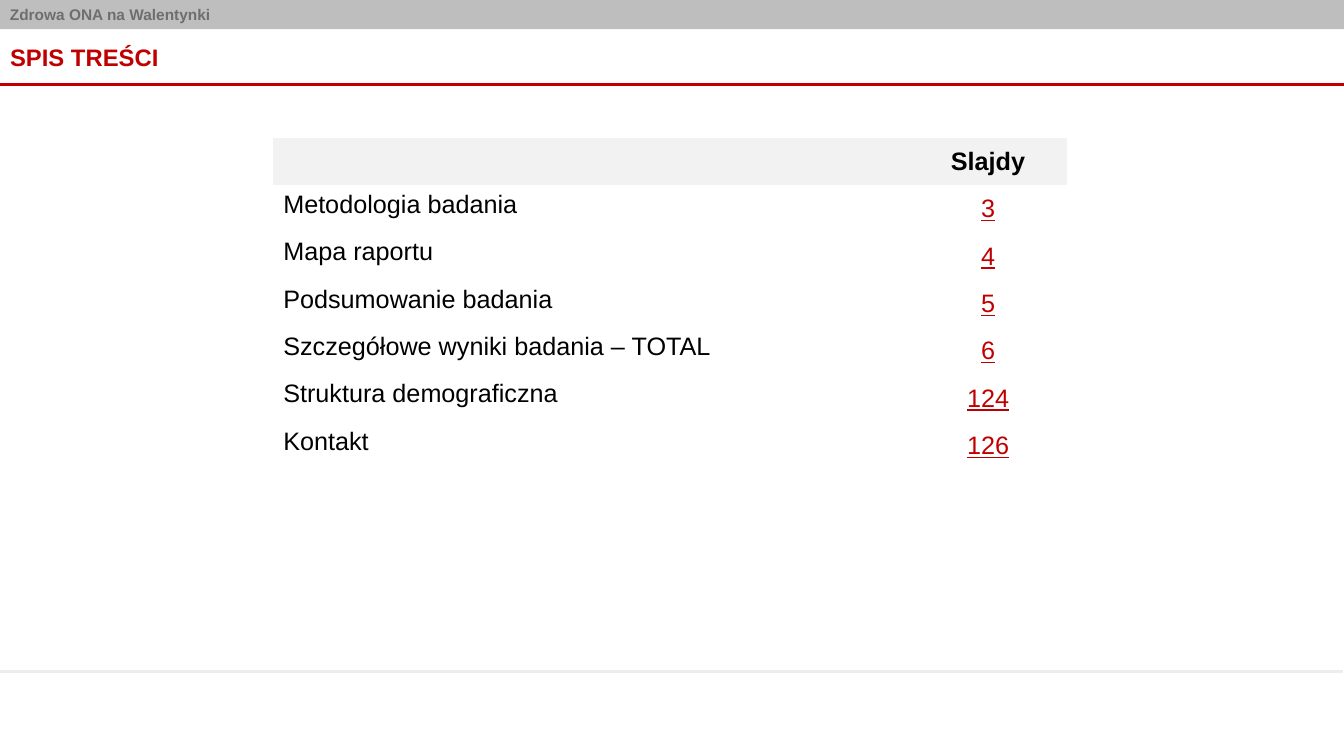
"""Build the table-of-contents slide of a survey report."""
from dataclasses import dataclass

from lxml import etree
from pptx import Presentation
from pptx.dml.color import RGBColor
from pptx.enum.shapes import MSO_CONNECTOR, MSO_SHAPE
from pptx.enum.text import MSO_ANCHOR, MSO_AUTO_SIZE, PP_ALIGN
from pptx.oxml.ns import qn
from pptx.slide import Slide
from pptx.table import _Cell
from pptx.text.text import TextFrame
from pptx.util import Emu, Pt

PX = 9144
WIDTH, HEIGHT = 1333, 750
LEFT, CENTER = PP_ALIGN.LEFT, PP_ALIGN.CENTER
TOP, MIDDLE = MSO_ANCHOR.TOP, MSO_ANCHOR.MIDDLE
RECTANGLE = MSO_SHAPE.RECTANGLE
STRAIGHT = MSO_CONNECTOR.STRAIGHT
NO_AUTOFIT = MSO_AUTO_SIZE.NONE
PLAIN_TABLE_STYLE = "{2D5ABB26-0587-4C30-8999-92F81FD0307C}"
TITLE_ONLY = 5

COLORS = {
    "banner": "7F7F7F",
    "banner_text": "6D6E70",
    "accent": "C00000",
    "footer_rule": "EDEDED",
    "header": "F2F2F2",
    "text": "000000",
}
MARGINS = {"margin_left": 10, "margin_right": 10, "margin_top": 5, "margin_bottom": 5}


@dataclass(frozen=True)
class TextStyle:
    size: int
    color: str
    bold: bool = False
    underline: bool = False
    align: PP_ALIGN = LEFT
    anchor: MSO_ANCHOR = TOP


@dataclass(frozen=True)
class Rule:
    start: int
    end: int
    y: int
    color: str


@dataclass(frozen=True)
class Chapter:
    name: str
    page: str


BANNER_STYLE = TextStyle(11, "banner_text", bold=True)
TITLE_STYLE = TextStyle(17, "accent", bold=True, anchor=MIDDLE)
HEADER_STYLE = TextStyle(18, "text", bold=True, align=CENTER, anchor=MIDDLE)
NAME_STYLE = TextStyle(18, "text")
PAGE_STYLE = TextStyle(18, "accent", underline=True, align=CENTER, anchor=MIDDLE)

RULES = (
    Rule(1332, -6, 666, "footer_rule"),
    Rule(1335, -4, 84, "accent"),
)
CHAPTERS = (
    Chapter("Metodologia badania", "3"),
    Chapter("Mapa raportu", "4"),
    Chapter("Podsumowanie badania", "5"),
    Chapter("Szczegółowe wyniki badania – TOTAL", "6"),
    Chapter("Struktura demograficzna", "124"),
    Chapter("Kontakt", "126"),
)
COLUMN_WIDTHS = (631, 156)
ROW_HEIGHT = 47


def px(length: int) -> Emu:
    """Convert whole pixels to EMU."""
    return Emu(length * PX)


def rgb(name: str) -> RGBColor:
    """Look up a named colour."""
    return RGBColor.from_string(COLORS[name])


def write(frame: TextFrame, text: str, style: TextStyle) -> None:
    """Write one styled paragraph into a text frame."""
    paragraph = frame.paragraphs[0]
    paragraph.alignment = style.align
    run = paragraph.add_run()
    run.text = text
    font_format = {
        "name": "Arial",
        "size": Pt(style.size),
        "bold": style.bold,
        "underline": style.underline,
    }
    for attribute, value in font_format.items():
        setattr(run.font, attribute, value)
    run.font.color.rgb = rgb(style.color)


def write_box(frame: TextFrame, text: str, style: TextStyle) -> None:
    """Set up the text frame of a shape and write into it."""
    frame_format = {
        "word_wrap": True,
        "auto_size": NO_AUTOFIT,
        "vertical_anchor": style.anchor,
        **{side: px(inset) for side, inset in MARGINS.items()},
    }
    for attribute, value in frame_format.items():
        setattr(frame, attribute, value)
    write(frame, text, style)


def write_cell(cell: _Cell, text: str, style: TextStyle) -> None:
    """Anchor a table cell and write into it."""
    cell.vertical_anchor = style.anchor
    write(cell.text_frame, text, style)


def draw_banner(slide: Slide) -> None:
    """Draw the half-transparent band with the report name."""
    banner = slide.shapes.add_shape(RECTANGLE, 0, 0, px(WIDTH), px(29))
    banner.shadow.inherit = False
    banner.fill.solid()
    banner.fill.fore_color.rgb = rgb("banner")
    banner.line.fill.background()
    fill_color = banner.fill._xPr.find(qn("a:solidFill"))[0]
    etree.SubElement(fill_color, qn("a:alpha"), val="50000")
    write_box(banner.text_frame, "Zdrowa ONA na Walentynki", BANNER_STYLE)


def draw_rule(slide: Slide, rule: Rule) -> None:
    """Draw one horizontal rule."""
    connector = slide.shapes.add_connector(
        STRAIGHT, px(rule.start), px(rule.y), px(rule.end), px(rule.y)
    )
    connector.line.color.rgb = rgb(rule.color)
    connector.line.width = Pt(2)
    etree.SubElement(connector._element.spPr, qn("a:effectLst"))


def place_title(slide: Slide) -> None:
    """Move and format the title placeholder."""
    title = slide.shapes.title
    position = {"left": 0, "top": 29, "width": WIDTH, "height": 55}
    for attribute, length in position.items():
        setattr(title, attribute, px(length))
    write_box(title.text_frame, "SPIS TREŚCI", TITLE_STYLE)


def draw_contents(slide: Slide) -> None:
    """Draw the table of chapters and their slide numbers."""
    row_count = len(CHAPTERS) + 1
    contents = slide.shapes.add_table(
        row_count, len(COLUMN_WIDTHS), px(271), px(137),
        px(sum(COLUMN_WIDTHS)), px(ROW_HEIGHT * row_count),
    ).table
    contents.first_row = contents.horz_banding = False
    contents._tbl.tblPr.find(qn("a:tableStyleId")).text = PLAIN_TABLE_STYLE
    for column, width in zip(contents.columns, COLUMN_WIDTHS):
        column.width = px(width)
    for cell in contents.iter_cells():
        cell.fill.background()
    for header in contents.rows[0].cells:
        header.fill.solid()
        header.fill.fore_color.rgb = rgb("header")
    write_cell(contents.cell(0, 1), "Slajdy", HEADER_STYLE)
    for row, chapter in enumerate(CHAPTERS, start=1):
        write_cell(contents.cell(row, 0), chapter.name, NAME_STYLE)
        write_cell(contents.cell(row, 1), chapter.page, PAGE_STYLE)


def main() -> None:
    """Assemble and save the slide."""
    presentation = Presentation()
    presentation.slide_width, presentation.slide_height = px(WIDTH), px(HEIGHT)
    slide = presentation.slides.add_slide(presentation.slide_layouts[TITLE_ONLY])
    draw_banner(slide)
    for rule in RULES:
        draw_rule(slide, rule)
    place_title(slide)
    draw_contents(slide)
    presentation.save("out.pptx")


if __name__ == "__main__":
    main()
